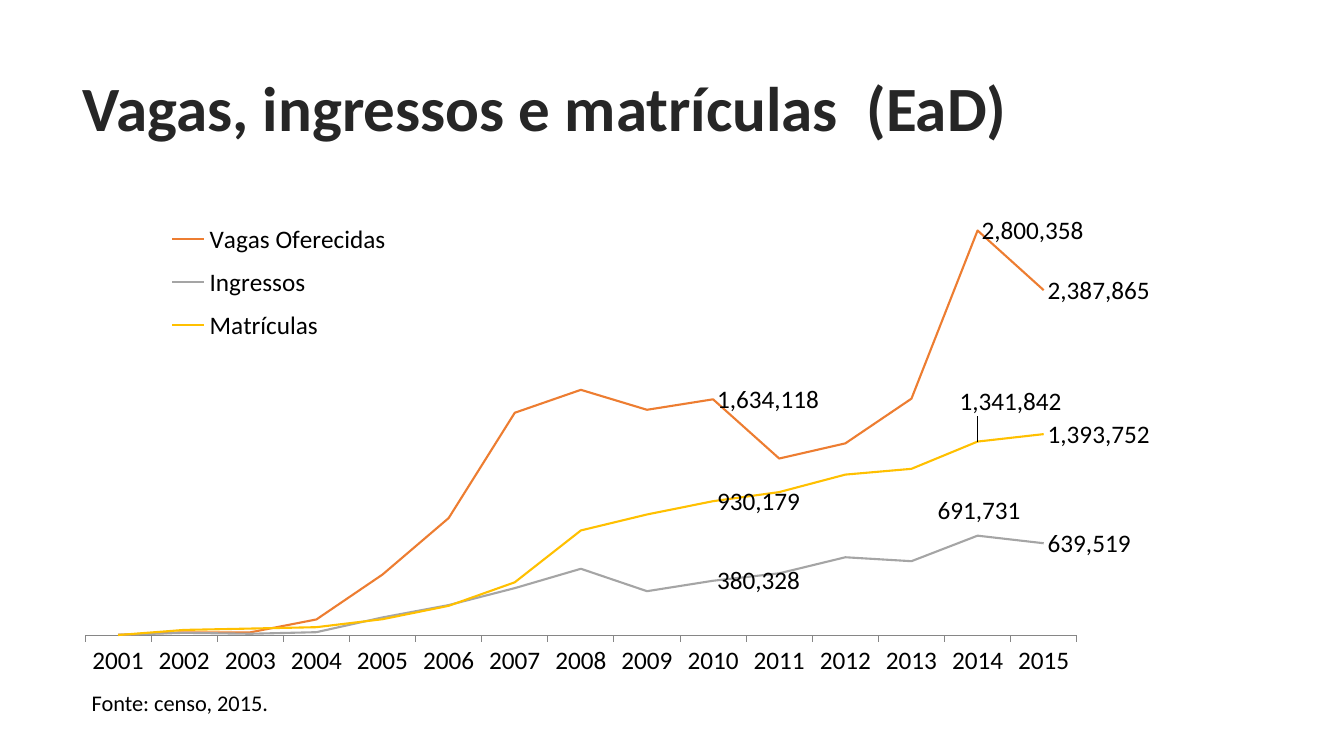
from dataclasses import dataclass, field

from lxml import etree
from pptx import Presentation
from pptx.chart.data import CategoryChartData
from pptx.dml.color import RGBColor
from pptx.enum.chart import XL_CHART_TYPE, XL_LABEL_POSITION, XL_LEGEND_POSITION, XL_TICK_LABEL_POSITION, XL_TICK_MARK
from pptx.enum.text import MSO_ANCHOR, MSO_AUTO_SIZE, PP_ALIGN
from pptx.oxml import parse_xml
from pptx.oxml.ns import nsdecls, qn
from pptx.util import Inches, Pt

LINE = XL_CHART_TYPE.LINE
LABEL_RIGHT = XL_LABEL_POSITION.RIGHT
LEGEND_RIGHT = XL_LEGEND_POSITION.RIGHT
LABELS_LOW = XL_TICK_LABEL_POSITION.LOW
TICK_OUTSIDE = XL_TICK_MARK.OUTSIDE
TICK_NONE = XL_TICK_MARK.NONE
MIDDLE = MSO_ANCHOR.MIDDLE
NO_FIT = MSO_AUTO_SIZE.NONE
GROW = MSO_AUTO_SIZE.SHAPE_TO_FIT_TEXT
LEFT = PP_ALIGN.LEFT

FONT = "Calibri"
TITLE_LAYOUT = 5
YEARS = range(2001, 2016)
LABELLED_YEARS = (2010, 2014, 2015)


@dataclass
class Indicator:
    name: str
    color: str
    values: tuple[int, ...]
    label_shifts: dict[int, tuple[float, float]] = field(default_factory=dict)


INDICATORS = [
    Indicator("Vagas Oferecidas", "ED7D31", (
        6856, 24389, 24025, 113079, 423411, 813550, 1541070, 1699489,
        1561715, 1634118, 1224760, 1329407, 1638427, 2800358, 2387865)),
    Indicator("Ingressos", "A5A5A5", (
        6618, 20685, 14233, 25006, 127014, 212246, 329271, 463093,
        308340, 380328, 431597, 542633, 515405, 691731, 639519),
        {2014: (-0.04, -0.05)}),
    Indicator("Matrículas", "FFC000", (
        5359, 40714, 49911, 59611, 114642, 207206, 369766, 727961,
        838125, 930179, 992927, 1113850, 1153572, 1341842, 1393752),
        {2014: (-0.02, -0.08)}),
]


def rgb(hex_color: str) -> RGBColor:
    return RGBColor.from_string(hex_color)


def style_font(font, size: float, color: str, bold: bool = False) -> None:
    font.name = FONT
    font.size = Pt(size)
    font.bold = bold
    font.color.rgb = rgb(color)


def manual_layout(x: float, y: float, size: tuple[float, float] | None = None, target: str = "",
                  edge: bool = False):
    layout = parse_xml(f"<c:layout {nsdecls('c')}><c:manualLayout/></c:layout>")
    settings = [("layoutTarget", target)] if target else []
    if edge:
        settings += [("xMode", "edge"), ("yMode", "edge")]
    settings += [("x", x), ("y", y)]
    if size:
        settings += [("w", size[0]), ("h", size[1])]
    for tag, value in settings:
        etree.SubElement(layout[0], qn(f"c:{tag}")).set("val", str(value))
    return layout


def replace_layout(parent, layout, after: str = "") -> None:
    for old in parent.findall(qn("c:layout")):
        parent.remove(old)
    if after:
        parent.find(qn(after)).addnext(layout)
    else:
        parent.insert(0, layout)


def format_indicator(series, indicator: Indicator) -> None:
    series.smooth = False
    series.format.line.color.rgb = rgb(indicator.color)
    series.format.line.width = Pt(1.5)
    for year in LABELLED_YEARS:
        label = series.points[YEARS.index(year)].data_label
        label.position = LABEL_RIGHT
    labels = series._element.find(qn("c:dLbls"))
    for year, shift in indicator.label_shifts.items():
        for label in labels.findall(qn("c:dLbl")):
            if label.find(qn("c:idx")).get("val") == str(YEARS.index(year)):
                replace_layout(label, manual_layout(*shift), "c:idx")
    labels.append(parse_xml(
        f"<c:extLst {nsdecls('c')}><c:ext uri=\"{{CE6537A1-D6FC-4f65-9D91-7224C49458BB}}\" "
        'xmlns:c15="http://schemas.microsoft.com/office/drawing/2012/chart">'
        '<c15:showLeaderLines val="1"/></c:ext></c:extLst>'))


def add_enrolment_chart(slide) -> None:
    enrolment = CategoryChartData(number_format="#,##0")
    enrolment.categories = [str(year) for year in YEARS]
    for indicator in INDICATORS:
        enrolment.add_series(indicator.name, indicator.values)
    chart = slide.shapes.add_chart(
        LINE, Inches(0.69), Inches(1.85), Inches(10.93), Inches(5.01), enrolment).chart
    chart.has_title = False
    style_font(chart.font, 18, "000000")

    chart.plots[0].vary_by_categories = False
    for series, indicator in zip(chart.plots[0].series, INDICATORS):
        format_indicator(series, indicator)

    years_axis = chart.category_axis
    years_axis.has_major_gridlines = False
    years_axis.major_tick_mark = TICK_OUTSIDE
    years_axis.minor_tick_mark = TICK_NONE
    years_axis.tick_label_position = LABELS_LOW
    years_axis.format.line.color.rgb = rgb("868686")
    years_axis.format.line.width = Pt(0.75)

    people_axis = chart.value_axis
    people_axis.has_major_gridlines = False
    people_axis.minimum_scale = 0
    people_axis.maximum_scale = 3000000
    people_axis.visible = False

    chart.has_legend = True
    chart.legend.position = LEGEND_RIGHT
    chart.legend.include_in_layout = True
    replace_layout(chart.legend._element,
                   manual_layout(0.07, 0.05, (0.24, 0.28), edge=True), "c:legendPos")
    plot_area = chart._chartSpace.chart.plotArea
    replace_layout(plot_area, manual_layout(0.014, 0.03, (0.9, 0.86), "inner", True))


def add_title(slide) -> None:
    title = slide.shapes.title
    title.left, title.top = Inches(0.72), Inches(0.51)
    title.width, title.height = Inches(11.66), Inches(1.19)
    frame = title.text_frame
    frame.text = "Vagas, ingressos e matrículas  (EaD)"
    frame.auto_size = NO_FIT
    frame.vertical_anchor = MIDDLE
    heading = frame.paragraphs[0]
    heading.alignment = LEFT
    heading.line_spacing = 0.9
    style_font(heading.runs[0].font, 45, "262626", True)


def add_data_source(slide) -> None:
    data_source = slide.shapes.add_textbox(Inches(0.81), Inches(6.79), Inches(1.98), Inches(0.37))
    frame = data_source.text_frame
    frame.text = "Fonte: censo, 2015."
    frame.word_wrap = False
    frame.auto_size = GROW
    style_font(frame.paragraphs[0].runs[0].font, 16, "000000")


def main() -> None:
    presentation = Presentation()
    presentation.slide_width, presentation.slide_height = Inches(13.33), Inches(7.5)
    slide = presentation.slides.add_slide(presentation.slide_layouts[TITLE_LAYOUT])
    add_enrolment_chart(slide)
    add_title(slide)
    add_data_source(slide)
    presentation.save("out.pptx")


if __name__ == "__main__":
    main()
